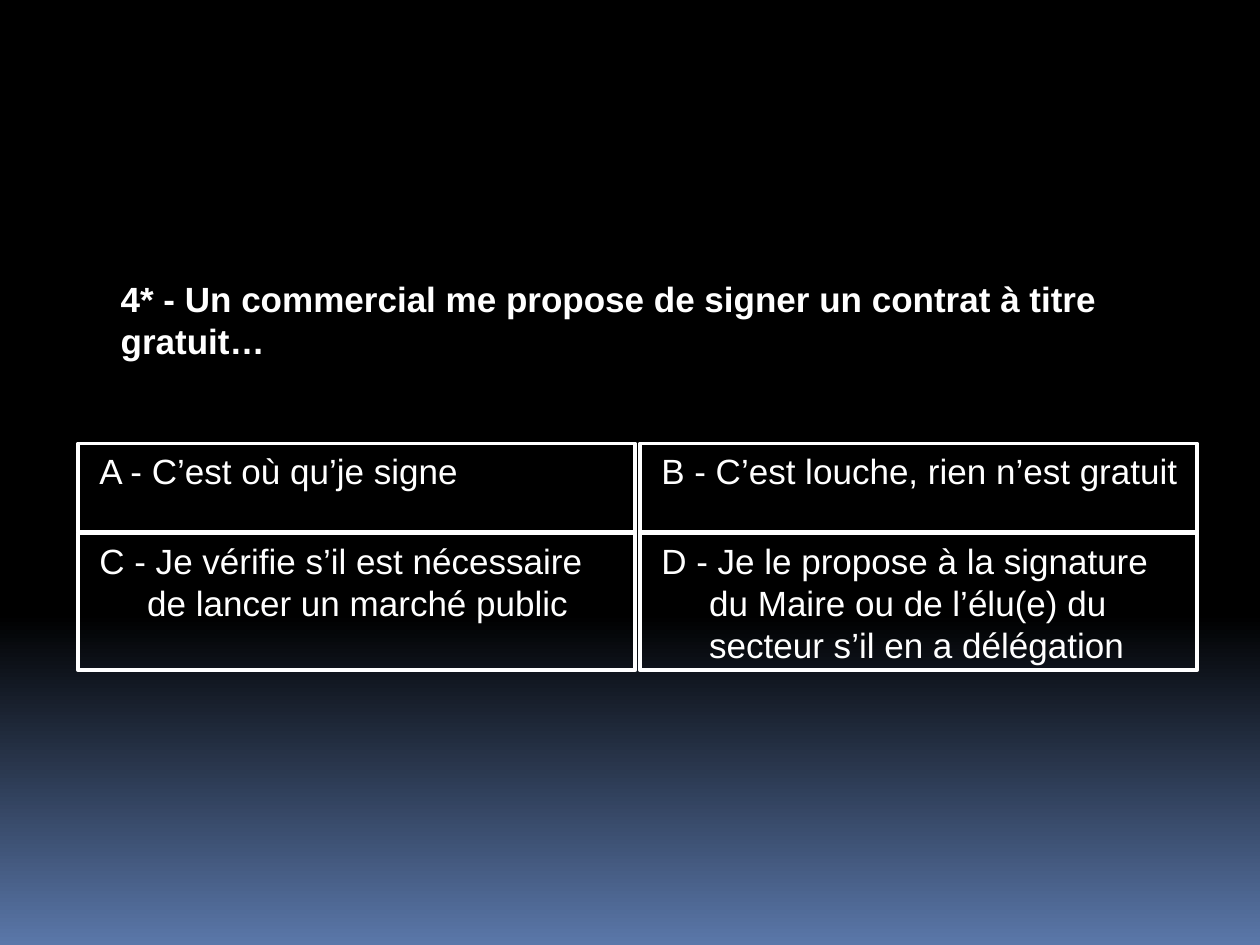
from pptx import Presentation
from pptx.dml.color import RGBColor
from pptx.enum.shapes import MSO_SHAPE
from pptx.enum.text import MSO_ANCHOR, PP_ALIGN
from pptx.util import Inches, Pt

COLORS = {"white": "FFFFFF", "black": "000000", "blue": "5A77A9"}


def write_text(shape, text, *, bold=False, anchor=MSO_ANCHOR.TOP,
               left_margin=0, indent=0, space_before=0):
    frame = shape.text_frame
    frame.word_wrap = True
    frame.vertical_anchor = anchor
    paragraph = frame.paragraphs[0]
    paragraph.alignment = PP_ALIGN.LEFT
    paragraph.space_before = Pt(space_before)
    properties = paragraph._p.get_or_add_pPr()
    properties.set("marL", str(Inches(left_margin)))
    properties.set("indent", str(Inches(indent)))
    run = paragraph.add_run()
    run.text = text
    run.font.name = "Arial"
    run.font.size = Pt(20)
    run.font.bold = bold
    run.font.color.rgb = RGBColor.from_string(COLORS["white"])


presentation = Presentation()
presentation.slide_width = Inches(10)
presentation.slide_height = Inches(7.5)
slide = presentation.slides.add_slide(presentation.slide_layouts[6])

# Background: black down to 65 %, then fading to blue
fill = slide.background.fill
fill.gradient()
fill.gradient_angle = 270
for stop, (position, color) in zip(fill.gradient_stops, [(0.65, "black"), (1, "blue")]):
    stop.position = position
    stop.color.rgb = RGBColor.from_string(COLORS[color])

# Question
question = slide.shapes.add_textbox(Inches(0.86), Inches(2.11), Inches(8.5), Inches(0.85))
write_text(question, "4* - Un commercial me propose de signer un contrat à titre gratuit…",
           bold=True, anchor=MSO_ANCHOR.MIDDLE)

# Answers in a two by two grid
column_lefts = [0.62, 5.08]
answer_rows = [
    (3.52, 0.7, ["A - C’est où qu’je signe",
                 "B - C’est louche, rien n’est gratuit"]),
    (4.23, 1.09, ["C - Je vérifie s’il est nécessaire de lancer un marché public",
                  "D - Je le propose à la signature du Maire ou de l’élu(e) du "
                  "secteur s’il en a délégation"]),
]
for top, height, answers in answer_rows:
    for left, answer in zip(column_lefts, answers):
        box = slide.shapes.add_shape(MSO_SHAPE.RECTANGLE, Inches(left), Inches(top),
                                     Inches(4.42), Inches(height))
        box.shadow.inherit = False
        box.fill.background()
        box.line.color.rgb = RGBColor.from_string(COLORS["white"])
        box.line.width = Pt(2.25)
        write_text(box, answer, left_margin=0.45, indent=-0.38, space_before=7)

presentation.save("out.pptx")
